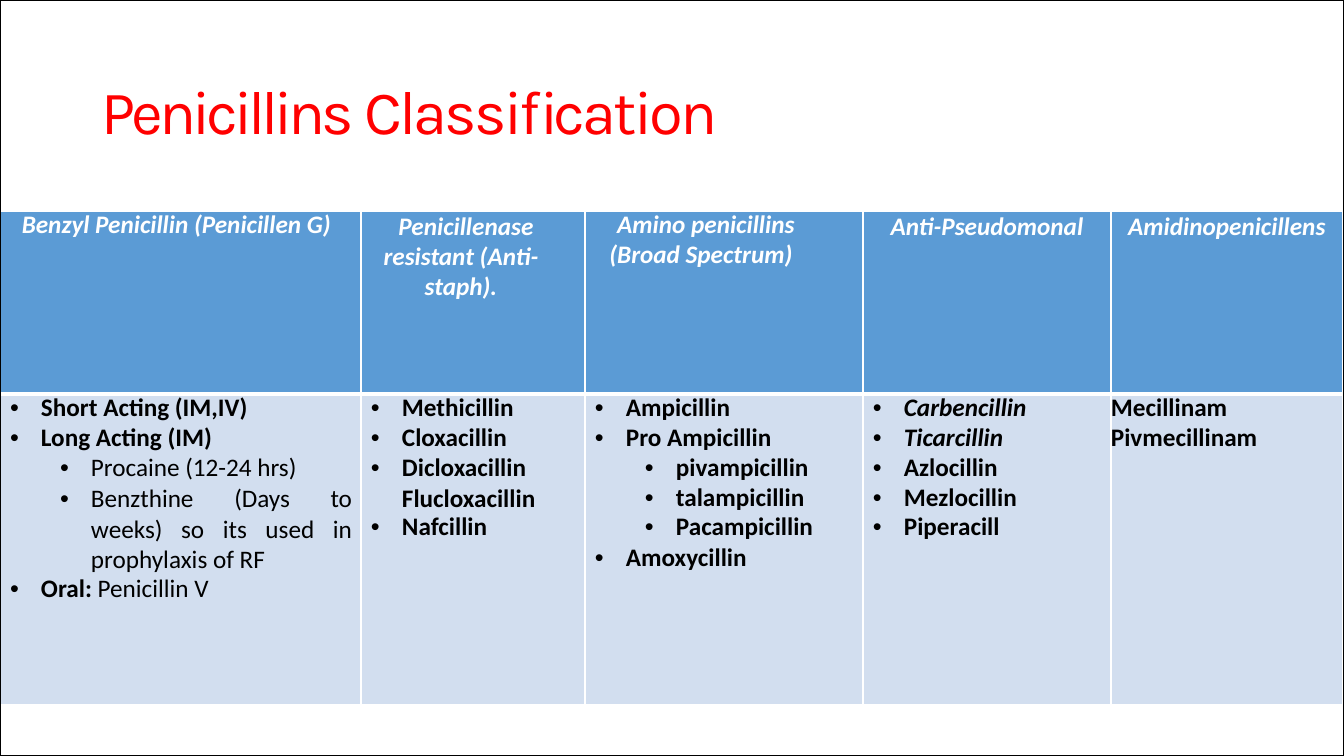
from lxml import etree
from pptx import Presentation
from pptx import util as u
from pptx.dml.color import RGBColor
from pptx.enum import shapes, text
from pptx.oxml.ns import qn

PX = 914400 / 100.8
COLORS = {"title": "FF0000", "head": "5B9BD5", "body": "D2DEEF",
          "white": "FFFFFF", "black": "000000"}
AL = text.PP_ALIGN


def px(n):
    return u.Emu(round(n * PX))


def write(para, words, color, spc=0, **fmt):
    """Add a run with font attributes and letter spacing in points."""
    run = para.add_run()
    run.text = words
    run.font.color.rgb = RGBColor.from_string(COLORS[color])
    for key, val in fmt.items():
        setattr(run.font, key, val)
    if spc:
        run.font._element.set("spc", str(round(spc * 100)))


prs = Presentation()
prs.slide_width, prs.slide_height = px(1344), px(756)
slide = prs.slides.add_slide(prs.slide_layouts[6])

# Title
box = slide.shapes.add_textbox(px(101), px(67), px(1008), px(95))
frame = box.text_frame
frame.word_wrap = True
for side, gap in {"left": 1, "top": 6, "right": 0, "bottom": 0}.items():
    setattr(frame, "margin_" + side, px(gap))
for words, spc in (("Penicillins ", -3), ("Classification", -2)):
    write(frame.paragraphs[0], words, "title", spc, name="Karla", size=u.Pt(44))

# Header: words, line spacing, first-line indent, right margin
PT21 = u.Pt(21)
HEADS = [
    ("Benzyl Penicillin (Penicillen G)", PT21, 10, 18),
    ("Penicillenase resistant (Anti- staph).", 0.99, 10, 24),
    ("Amino penicillins (Broad Spectrum)", PT21, 10, 46),
    ("Anti-Pseudomonal", 1.0, 0, 0),
    ("Amidinopenicillens", 1.0, 0, 0),
]

# Body: level, line spacing, runs of (words, format)
B, N, I = {"bold": True}, {"bold": False}, {"bold": True, "italic": True}
WIDE = {"bold": False, "spc": 10}
LISTS = [
    [(0, PT21, [("Short Acting (IM,IV)", B)]),
     (0, PT21, [("Long Acting (IM)", B)]),
     (1, 1.0, [("Procaine (12-24 hrs)", N)]),
     (1, 0.99, [("Benzthine", N), (" ", WIDE), ("(Days", N), (" ", WIDE),
                ("to weeks) so its used in prophylaxis of RF", N)]),
     (0, PT21, [("Oral: ", B), ("Penicillin V", N)])],
    [(0, PT21, [("Methicillin", B)]),
     (0, PT21, [("Cloxacillin", B)]),
     (0, u.Pt(22), [("Dicloxacillin Flucloxacillin", B)]),
     (0, u.Pt(20), [("Nafcillin", B)])],
    [(0, PT21, [("Ampicillin", B)]),
     (0, PT21, [("Pro Ampicillin", B)]),
     (1, 1.0, [("pivampicillin", B)]),
     (1, PT21, [("talampicillin", B)]),
     (1, PT21, [("Pacampicillin", B)]),
     (0, 1.0, [("Amoxycillin", B)])],
    [(0, PT21, [("Carbencillin", I)]),
     (0, PT21, [("Ticarcillin", I)]),
     (0, 1.0, [("Azlocillin", B)]),
     (0, PT21, [("Mezlocillin", B)]),
     (0, PT21, [("Piperacill", B)])],
    [(None, PT21, [("Mecillinam Pivmecillinam", B)])],
]
WIDTHS = [361, 224, 278, 248, 232]
HEIGHTS = [183, 311]

table = slide.shapes.add_table(2, 5, px(0), px(211), px(sum(WIDTHS)),
                               px(sum(HEIGHTS))).table
for col, wide in zip(table.columns, WIDTHS):
    col.width = px(wide)
for row, high in zip(table.rows, HEIGHTS):
    row.height = px(high)

for r, fill in enumerate(("head", "body")):
    for c in range(len(WIDTHS)):
        cell = table.cell(r, c)
        for side in ("left", "top", "right", "bottom"):
            setattr(cell, "margin_" + side, 0)
        props = cell._tc.get_or_add_tcPr()
        for tag in ("lnL", "lnR", "lnT", "lnB"):
            thick = 3 if tag == ("lnB", "lnT")[r] else 1
            line = etree.SubElement(props, qn("a:" + tag), w=str(u.Pt(thick)))
            solid = etree.SubElement(line, qn("a:solidFill"))
            etree.SubElement(solid, qn("a:srgbClr"), val=COLORS["white"])
        cell.fill.solid()
        cell.fill.fore_color.rgb = RGBColor.from_string(COLORS[fill])

for c, (words, gap, dent, right) in enumerate(HEADS):
    cell = table.cell(0, c)
    cell.margin_right = px(right)
    para = cell.text_frame.paragraphs[0]
    para.alignment, para.line_spacing = AL.CENTER, gap
    para._p.get_or_add_pPr().set("indent", str(px(dent)))
    write(para, words, "white", name="Calibri", size=u.Pt(18), **I)

table.cell(1, 0).margin_right = px(9)
for c, items in enumerate(LISTS):
    frame = table.cell(1, c).text_frame
    for n, (level, gap, runs) in enumerate(items):
        para = frame.add_paragraph() if n else frame.paragraphs[0]
        para.alignment = AL.LEFT if c else AL.JUSTIFY
        para.line_spacing = gap
        if level is not None:
            para.level = level
            props = para._p.get_or_add_pPr()
            props.set("marL", str(px(41 + 50 * level)))
            props.set("indent", str(px(-31)))
            etree.SubElement(props, qn("a:buFont"), typeface="Arial")
            etree.SubElement(props, qn("a:buChar"), char="•")
        for words, fmt in runs:
            write(para, words, "black", name="Calibri", size=u.Pt(18),
                  **{"italic": False, **fmt})

# Slide border
edge = slide.shapes.add_shape(shapes.MSO_SHAPE.RECTANGLE, 0, 0, px(1344), px(756))
edge.shadow.inherit = False
edge.fill.background()
edge.line.color.rgb = RGBColor.from_string(COLORS["black"])
edge.line.width = u.Pt(1)

prs.save("out.pptx")
